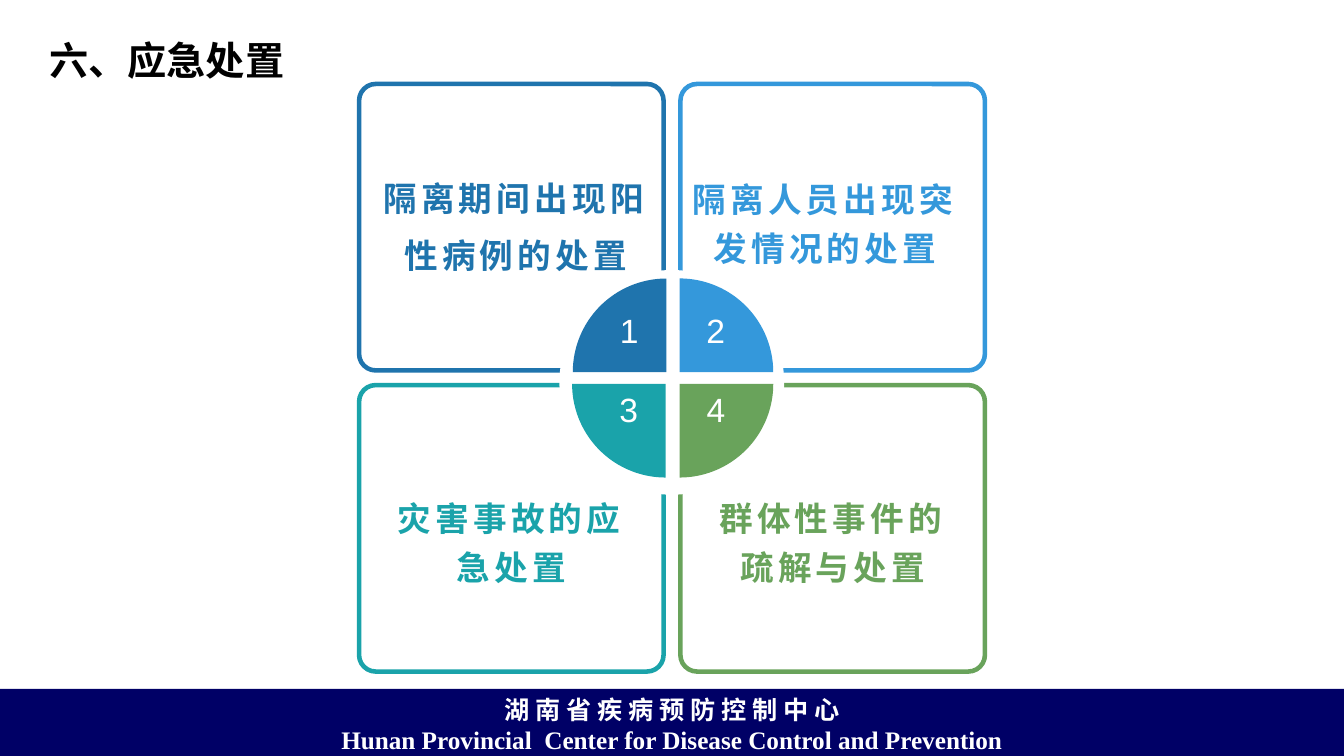
"""Build the emergency response slide with four numbered quarters."""
from dataclasses import dataclass

from pptx import Presentation
from pptx.dml.color import RGBColor
from pptx.enum.shapes import MSO_SHAPE
from pptx.enum.text import MSO_ANCHOR, MSO_AUTO_SIZE, PP_ALIGN
from pptx.oxml.ns import qn
from pptx.util import Inches, Pt

RECTANGLE, ROUNDED = MSO_SHAPE.RECTANGLE, MSO_SHAPE.ROUNDED_RECTANGLE
OVAL, ARC = MSO_SHAPE.OVAL, MSO_SHAPE.ARC
TOP, MIDDLE = MSO_ANCHOR.TOP, MSO_ANCHOR.MIDDLE
LEFT, CENTER = PP_ALIGN.LEFT, PP_ALIGN.CENTER
FIXED = MSO_AUTO_SIZE.NONE

WIDTH, HEIGHT = Inches(13.33), Inches(7.5)
COLUMN, ROW = WIDTH / 160, HEIGHT / 90
HAN_FONT, LATIN_FONT, SERIF_FONT = "Noto Sans CJK SC", "Arial", "Times New Roman"
WHITE, BLACK, NAVY = "FFFFFF", "000000", "000066"


@dataclass(frozen=True)
class Area:
    """A rectangle in grid columns and rows."""
    column: float
    row: float
    columns: float
    rows: float

    def lengths(self) -> tuple[int, int, int, int]:
        """Return left, top, width and height."""
        return (round(self.column * COLUMN), round(self.row * ROW),
                round(self.columns * COLUMN), round(self.rows * ROW))


@dataclass(frozen=True)
class Quarter:
    """One card with its wedge, number and label."""
    number: str
    label: str
    color: str
    card: Area
    wedge: Area
    turn: int
    number_area: Area
    label_area: Area
    line_spacing: float = 1.2


CARD = (36.25, 34.1)
WEDGE = (22.3, 22.3)
QUARTERS = (
    Quarter("1", "隔离期间出现阳性病例的处置", "1F74AD",
            Area(42.75, 10, *CARD), Area(68.2, 33.15, *WEDGE), 270,
            Area(70.7, 36.25, 8.4, 7.9), Area(43.95, 16.9, 34.9, 17.65), 1.4),
    Quarter("2", "隔离人员出现突发情况的处置", "3498DB",
            Area(81, 10, *CARD), Area(69.75, 33.15, *WEDGE), 0,
            Area(81, 36.25, 8.4, 7.9), Area(79.1, 18.6, 38.2, 14.5)),
    Quarter("4", "群体性事件的疏解与处置", "69A35B",
            Area(81, 45.85, *CARD), Area(69.75, 34.55, *WEDGE), 90,
            Area(81.1, 45.7, 8.3, 9), Area(83.9, 54.5, 30.5, 18.6)),
    Quarter("3", "灾害事故的应急处置", "1AA3AA",
            Area(42.75, 45.85, *CARD), Area(68.1, 34.55, *WEDGE), 180,
            Area(70.7, 45.7, 8.3, 9), Area(45.6, 54.5, 30.5, 18.6)),
)


def rgb(value: str) -> RGBColor:
    """Turn a hex string into a colour."""
    return RGBColor.from_string(value)


def write(para, text: str, *, size: float, color: str, font: str = HAN_FONT,
          bold: bool = False, align=CENTER, spacing: int = 0,
          line_spacing: float = 1.0) -> None:
    """Add one formatted span to a paragraph."""
    para.alignment, para.line_spacing = align, line_spacing
    span = para.add_run()
    span.text = text
    span.font.size, span.font.bold, span.font.name = Pt(size), bold, font
    span.font.color.rgb = rgb(color)
    properties = span.font._element
    properties.set("spc", str(spacing * 100))
    east_asian = properties.makeelement(qn("a:ea"), {"typeface": HAN_FONT})
    properties.find(qn("a:latin")).addnext(east_asian)


def set_frame(frame, anchor=MIDDLE, side: float = 0.1, top: float = 0.05,
              bottom: float = 0.05) -> None:
    """Set wrapping, anchor and insets in inches."""
    frame.word_wrap, frame.auto_size = True, FIXED
    frame.vertical_anchor = anchor
    frame.margin_left = frame.margin_right = Inches(side)
    frame.margin_top, frame.margin_bottom = Inches(top), Inches(bottom)


def add_shape(page, kind, area: Area, fill: str = "", line: str = ""):
    """Draw a preset shape with an optional fill and outline."""
    shape = page.shapes.add_shape(kind, *area.lengths())
    shape.shadow.inherit = False
    if fill:
        shape.fill.solid()
        shape.fill.fore_color.rgb = rgb(fill)
    else:
        shape.fill.background()
    if line:
        shape.line.color.rgb = rgb(line)
        shape.line.width = Pt(3.25)
    else:
        shape.line.fill.background()
    return shape


def add_title(page) -> None:
    """Place and format the title."""
    title = page.shapes.title
    title.left, title.top, title.width, title.height = Area(4.55, 2.5, 147.4, 9.35).lengths()
    set_frame(title.text_frame, side=0.11)
    write(title.text_frame.paragraphs[0], "六、应急处置",
          size=28, color=BLACK, bold=True, align=LEFT)


def add_banner(page) -> None:
    """Draw the bottom band with the centre's name."""
    frame = add_shape(page, RECTANGLE, Area(0, 82, 160, 8.5), fill=NAVY).text_frame
    set_frame(frame, side=0, top=0, bottom=0)
    write(frame.paragraphs[0], "湖 南 省 疾 病 预 防 控 制 中 心",
          size=18, color=WHITE, bold=True)
    write(frame.add_paragraph(),
          "Hunan Provincial  Center for Disease Control and Prevention",
          size=18, color=WHITE, font=SERIF_FONT, bold=True)


def add_card(page, quarter: Quarter) -> None:
    """Draw the outlined card of a quarter."""
    card = add_shape(page, ROUNDED, quarter.card, line=quarter.color)
    card.adjustments[0] = 0.058


def add_wedge(page, quarter: Quarter) -> None:
    """Draw the filled quarter circle."""
    add_shape(page, ARC, quarter.wedge, fill=quarter.color).rotation = quarter.turn


def add_texts(page, quarter: Quarter) -> None:
    """Write the number and the label of a quarter."""
    box = page.shapes.add_textbox(*quarter.number_area.lengths())
    set_frame(box.text_frame, anchor=TOP)
    write(box.text_frame.paragraphs[0], quarter.number,
          size=24, color=WHITE, font=LATIN_FONT)
    box = page.shapes.add_textbox(*quarter.label_area.lengths())
    set_frame(box.text_frame, bottom=0)
    write(box.text_frame.paragraphs[0], quarter.label, size=24,
          color=quarter.color, font=LATIN_FONT, bold=True, spacing=3,
          line_spacing=quarter.line_spacing)


def main() -> None:
    """Build and save the deck."""
    deck = Presentation()
    deck.slide_width, deck.slide_height = WIDTH, HEIGHT
    page = deck.slides.add_slide(deck.slide_layouts[5])
    add_title(page)
    add_banner(page)
    for quarter in QUARTERS:
        add_card(page, quarter)
    add_shape(page, OVAL, Area(66.6, 32.15, 26.75, 26.75), fill=WHITE)
    for quarter in QUARTERS:
        add_wedge(page, quarter)
    for quarter in QUARTERS:
        add_texts(page, quarter)
    deck.save("out.pptx")


if __name__ == "__main__":
    main()
